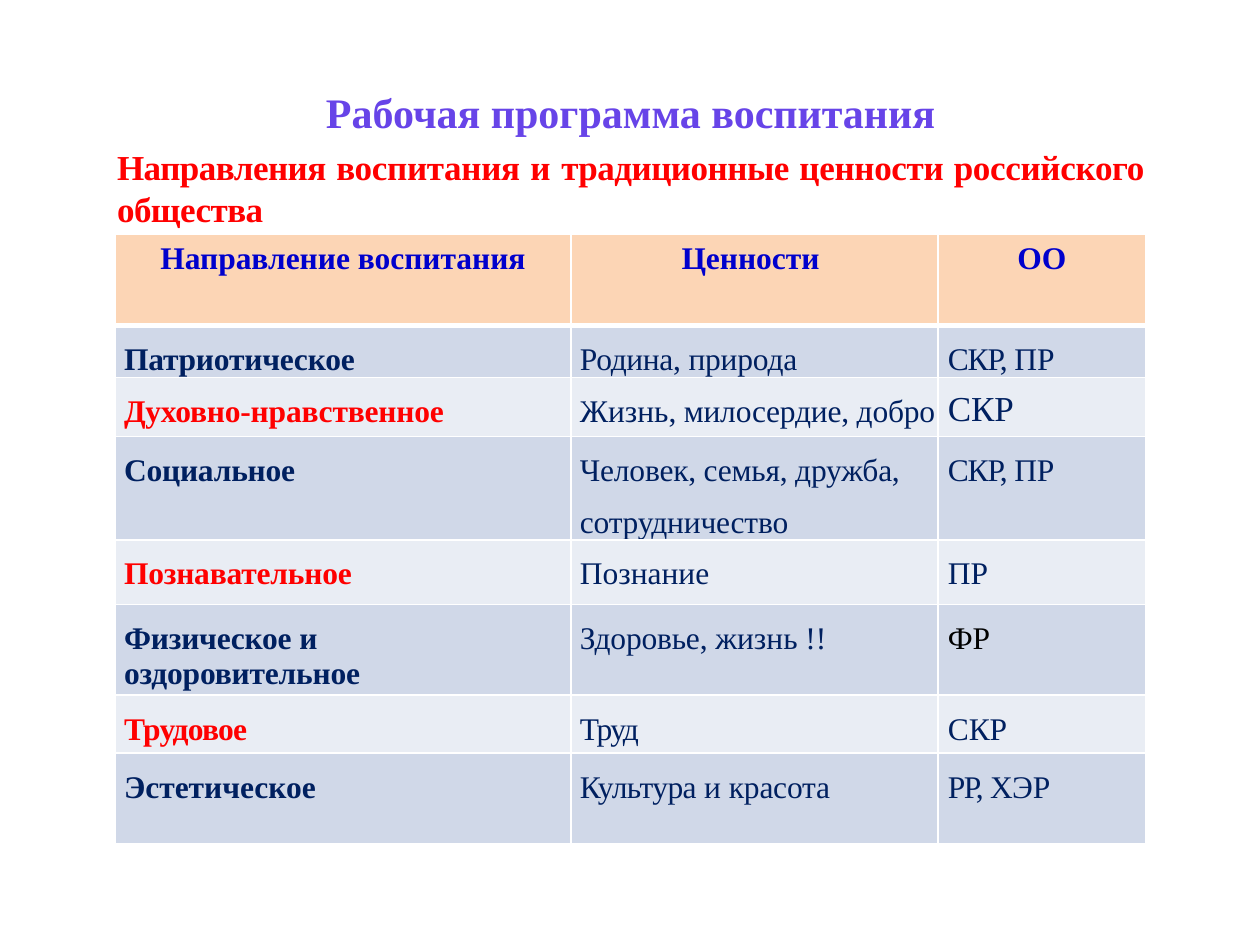
from dataclasses import dataclass

from lxml.etree import SubElement
from pptx import Presentation
from pptx.dml.color import RGBColor
from pptx.enum.text import PP_ALIGN
from pptx.oxml.ns import qn
from pptx.util import Cm, Pt


@dataclass(frozen=True)
class Theme:
    font: str = "Times New Roman"
    violet: str = "6744E8"
    red: str = "FF0000"
    blue: str = "0000CC"
    navy: str = "002060"
    black: str = "000000"
    white: str = "FFFFFF"
    peach: str = "FCD5B5"
    bands: tuple = ("E9EDF4", "D0D8E8")
    title: float = 24
    lead: float = 20
    body: float = 18
    pitch: float = 29.6


look = Theme()


def add_runs(para, runs, size, color, bold=False):
    """Add (text, letter spacing in points) pairs to a paragraph."""
    for text, gap in runs:
        run = para.add_run()
        run.text = text
        font = run.font
        font.name, font.size, font.bold = look.font, Pt(size), bold
        font.color.rgb = RGBColor.from_string(color)
        if gap:
            font._element.set("spc", str(round(gap * 100)))


def paint(cell, fill, base):
    """Give a cell white borders, with the lower one base points wide, and a fill."""
    props = cell._tc.get_or_add_tcPr()
    for side, width in (("L", 1), ("R", 1), ("T", 1), ("B", base)):
        line = SubElement(props, qn(f"a:ln{side}"), w=str(Pt(width)))
        solid = SubElement(line, qn("a:solidFill"))
        SubElement(solid, qn("a:srgbClr"), val=look.white)
    cell.fill.solid()
    cell.fill.fore_color.rgb = RGBColor.from_string(fill)


deck = Presentation()
deck.slide_width, deck.slide_height = Cm(25.4), Cm(19.05)
slide = deck.slides.add_slide(deck.slide_layouts[6])

# Heading
box = slide.shapes.add_textbox(Cm(2.11), Cm(1.52), Cm(21.2), Cm(4))
frame = box.text_frame
frame.word_wrap = True
frame.margin_top = Cm(0.22)
title = frame.paragraphs[0]
title.alignment = PP_ALIGN.CENTER
add_runs(title, [("Рабочая программа воспитания", 0)], look.title, look.violet, True)
lead = frame.add_paragraph()
lead.alignment = PP_ALIGN.JUSTIFY
lead.space_before = Pt(5)
add_runs(lead, [
    ("Направления ", -0.3), ("воспитания ", -0.2), ("и ", 0),
    ("традиционные ", -0.3), ("ценности российского ", -0.2), ("общества", -0.3),
], look.lead, look.red, True)

# Table
heads = ["Направление воспитания", "Ценности ", "ОО"]
rows = [
    [[("Патриотическое", -0.1)],
     [("Родина, ", -0.2), ("природа", -0.1)],
     [("СКР, ", -0.7), ("ПР", 0)]],
    [[("Духовно-нравственное", -0.1)],
     [("Жизнь", 0), (", ", -0.3), ("милосердие, добро", -0.1)],
     [("СКР", -0.1)]],
    [[("Социальное", -0.1)],
     [("Человек, семья, дружба, сотрудничество", -0.1)],
     [("СКР, ", -0.7), ("ПР", -0.1)]],
    [[("Познавательное", -0.1)],
     [("Познание", 0)],
     [("ПР", 0)]],
    [[("Физическое ", -0.1), ("и", 0)],
     [("Здоровье, ", -0.1), ("жизнь !!", 0)],
     [("ФР", -0.1)]],
    [[("Трудовое", -0.4)],
     [("Труд", -0.8)],
     [("СКР", -0.1)]],
    [[("Эстетическое", 0)],
     [("Культура ", -0.3), ("и ", 0), ("красота", -0.1)],
     [("РР, ", -0.9), ("ХЭР", -0.1)]],
]
widths = [9.19, 7.4, 4.19]
heights = [1.83, 0.97, 1.19, 1.83, 1.3, 1.83, 1.17, 1.83]
indents = [0.18, 0.18, 0.2]

grid = slide.shapes.add_table(
    len(heights), len(widths), Cm(2.32), Cm(4.73), Cm(sum(widths)), Cm(sum(heights))
).table
for col, width in zip(grid.columns, widths):
    col.width = Cm(width)
for row, height in zip(grid.rows, heights):
    row.height = Cm(height)

for c, text in enumerate(heads):
    cell = grid.cell(0, c)
    paint(cell, look.peach, 3)
    para = cell.text_frame.paragraphs[0]
    para.alignment = PP_ALIGN.CENTER
    add_runs(para, [(text, 0)], look.body, look.blue, True)

special = {(2, 2): (look.lead, look.navy), (5, 2): (look.body, look.black)}
for r, row in enumerate(rows, 1):
    for c, runs in enumerate(row):
        cell = grid.cell(r, c)
        paint(cell, look.bands[r % 2], 1)
        cell.margin_left = cell.margin_right = 0
        cell.margin_top = cell.margin_bottom = 0
        para = cell.text_frame.paragraphs[0]
        para.line_spacing = Pt(look.pitch)
        para._p.get_or_add_pPr().set("marL", str(Cm(indents[c])))
        main = look.red if c == 0 and r % 2 == 0 else look.navy
        size, color = special.get((r, c), (look.body, main))
        add_runs(para, runs, size, color, c == 0)

# Second line of the physical training cell
para = grid.cell(5, 0).text_frame.add_paragraph()
para._p.get_or_add_pPr().set("marL", str(Cm(indents[0])))
add_runs(para, [("оздоровительное", -0.1)], look.body, look.navy, True)

deck.save("out.pptx")
